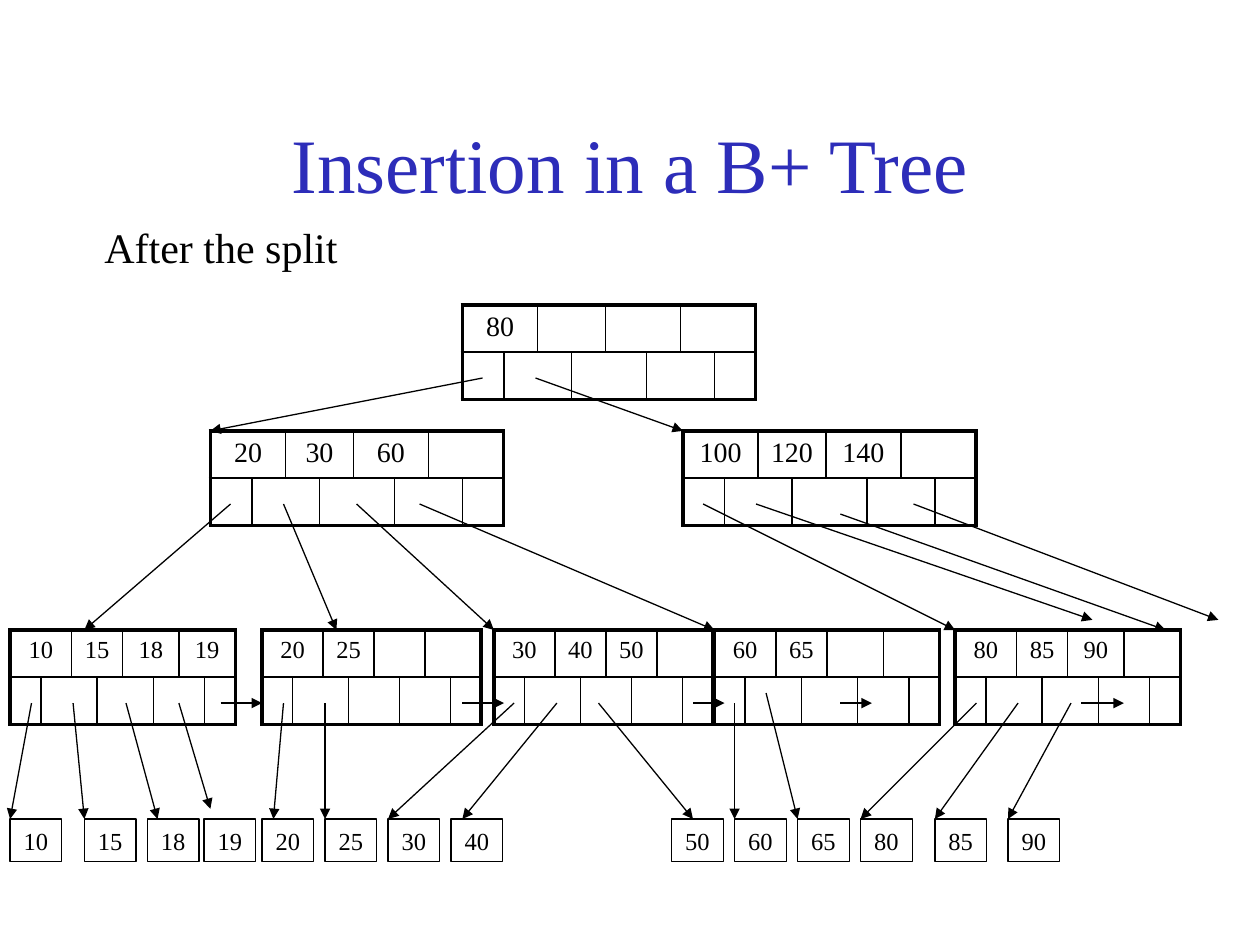
from lxml import etree
from pptx import Presentation
from pptx import util as u
from pptx.dml.color import RGBColor
from pptx.enum import shapes, text
from pptx.oxml import ns

BLACK = RGBColor(0, 0, 0)
BLUE = RGBColor(0x2D, 0x2D, 0xB9)
FONT = "Times New Roman"

INNER = (33, 27, 27, 27, 33, 27, 27, 33)
WIDE = (24, 24, 20, 20, 24, 20, 20, 24)
SLIM = (24, 24, 20, 20, 20, 20, 20, 24)
SPANS = (((0, 1), (2, 3), (4, 5), (6, 7)),
         ((0, 0), (1, 2), (3, 4), (5, 6), (7, 7)))

NODES = [
    (3.67, 2.42, 2.33, INNER, 16, ["80"]),
    (1.67, 3.42, 2.33, INNER, 16, ["20", "30", "60"]),
    (5.42, 3.42, 2.33, INNER, 16, ["100", "120", "140"]),
    (0.08, 5, 1.79, WIDE, 14, ["10", "15", "18", "19"]),
    (2.08, 5, 1.74, SLIM, 14, ["20", "25"]),
    (3.92, 5, 1.74, SLIM, 14, ["30", "40", "50"]),
    (5.67, 5, 1.79, WIDE, 14, ["60", "65"]),
    (7.58, 5, 1.79, WIDE, 14, ["80", "85", "90"]),
]

RECORDS = [
    ("10", 0.08), ("15", 0.67), ("18", 1.17), ("19", 1.62), ("20", 2.08),
    ("25", 2.58), ("30", 3.08), ("40", 3.58), ("50", 5.33), ("60", 5.83),
    ("65", 6.33), ("80", 6.83), ("85", 7.42), ("90", 8),
]

CHILD = [
    (3.83, 3, 1.67, 3.42), (4.25, 3, 5.42, 3.42),
    (1.83, 4, 0.67, 5), (2.25, 4, 2.67, 5),
    (2.83, 4, 3.92, 5), (3.33, 4, 5.67, 5),
    (5.58, 4, 7.58, 5), (6, 4, 8.67, 4.92),
    (6.67, 4.08, 9.25, 5), (7.25, 4, 9.67, 4.92),
]
NEXT = [(1.75, 2.08), (3.67, 4), (5.5, 5.75), (6.67, 6.92), (8.58, 8.92)]
DATA = [
    (0.25, 5.58, 0.08, 6.5), (0.58, 5.58, 0.67, 6.5),
    (1, 5.58, 1.25, 6.5), (1.42, 5.58, 1.67, 6.42),
    (2.25, 5.58, 2.17, 6.5), (2.58, 5.58, 2.58, 6.5),
    (4.08, 5.58, 3.08, 6.5), (4.42, 5.58, 3.67, 6.5),
    (4.75, 5.58, 5.5, 6.5), (5.83, 5.58, 5.83, 6.5),
    (6.08, 5.5, 6.33, 6.5), (7.75, 5.58, 6.83, 6.5),
    (8.08, 5.58, 7.42, 6.5), (8.5, 5.58, 8, 6.5),
]


def inch(*vals):
    return [u.Cm(v * 2.54) for v in vals]


def write(frame, words, size, color=BLACK, align=text.PP_ALIGN.CENTER):
    frame.text = words
    para = frame.paragraphs[0]
    para.alignment = align
    for run in para.runs:
        run.font.size = u.Pt(size)
        run.font.name = FONT
        run.font.color.rgb = color
    if not words:
        para._p.get_or_add_endParaRPr().set("sz", str(size * 100))


def edge(cell, sides):
    props = cell._tc.get_or_add_tcPr()
    for side, thick in sides:
        line = etree.SubElement(props, ns.qn("a:ln" + side),
                                w=str(u.Pt(2.25 if thick else 1)))
        fill = etree.SubElement(line, ns.qn("a:solidFill"))
        etree.SubElement(fill, ns.qn("a:srgbClr"), val=str(BLACK))


def node(slide, left, top, width, parts, size, keys):
    grid = slide.shapes.add_table(2, 8, *inch(left, top, width, 0.75)).table
    grid.first_row = grid.horz_banding = False
    for col, part in zip(grid.columns, parts):
        col.width = inch(width * part / sum(parts))[0]
    for row in grid.rows:
        row.height = inch(0.375)[0]
    for r, spans in enumerate(SPANS):
        for n, (first, last) in enumerate(spans):
            if last > first:
                grid.cell(r, first).merge(grid.cell(r, last))
            words = keys[n] if r == 0 and n < len(keys) else ""
            for c in range(first, last + 1):
                cell = grid.cell(r, c)
                cell.margin_left = cell.margin_right = u.Cm(0.1)
                write(cell.text_frame, words if c == first else "", size)
                edge(cell, (("L", first == 0), ("R", last == 7),
                            ("T", r == 0), ("B", r == 1)))
                cell.fill.background()


def arrow(slide, *ends):
    line = slide.shapes.add_connector(shapes.MSO_CONNECTOR.STRAIGHT,
                                      *inch(*ends))
    line.line.color.rgb = BLACK
    line.line.width = u.Pt(0.75)
    etree.SubElement(line.line._get_or_add_ln(), ns.qn("a:tailEnd"),
                     type="triangle")
    etree.SubElement(line._element.spPr, ns.qn("a:effectLst"))


def record(slide, key, left):
    box = slide.shapes.add_shape(shapes.MSO_SHAPE.RECTANGLE,
                                 *inch(left, 6.5, 0.41, 0.34))
    box.shadow.inherit = False
    box.fill.background()
    box.line.color.rgb = BLACK
    box.line.width = u.Pt(0.75)
    box.text_frame.word_wrap = False
    box.text_frame.vertical_anchor = text.MSO_ANCHOR.MIDDLE
    write(box.text_frame, key, 14)


def main():
    deck = Presentation()
    deck.slide_width, deck.slide_height = inch(10, 7.5)
    slide = deck.slides.add_slide(deck.slide_layouts[5])

    title = slide.shapes.title
    title.left, title.top, title.width, title.height = inch(
        0.75, 0.67, 8.5, 1.25)
    title.text_frame.vertical_anchor = text.MSO_ANCHOR.MIDDLE
    write(title.text_frame, "Insertion in a B+ Tree", 44, BLUE)

    note = slide.shapes.add_textbox(*inch(0.73, 1.71, 2.05, 0.5))
    note.text_frame.word_wrap = False
    write(note.text_frame, "After the split", 24, align=text.PP_ALIGN.LEFT)

    for item in NODES:
        node(slide, *item)
    for key, left in RECORDS:
        record(slide, key, left)
    for ends in CHILD + DATA:
        arrow(slide, *ends)
    for start, end in NEXT:
        arrow(slide, start, 5.58, end, 5.58)
    deck.save("out.pptx")


if __name__ == "__main__":
    main()
